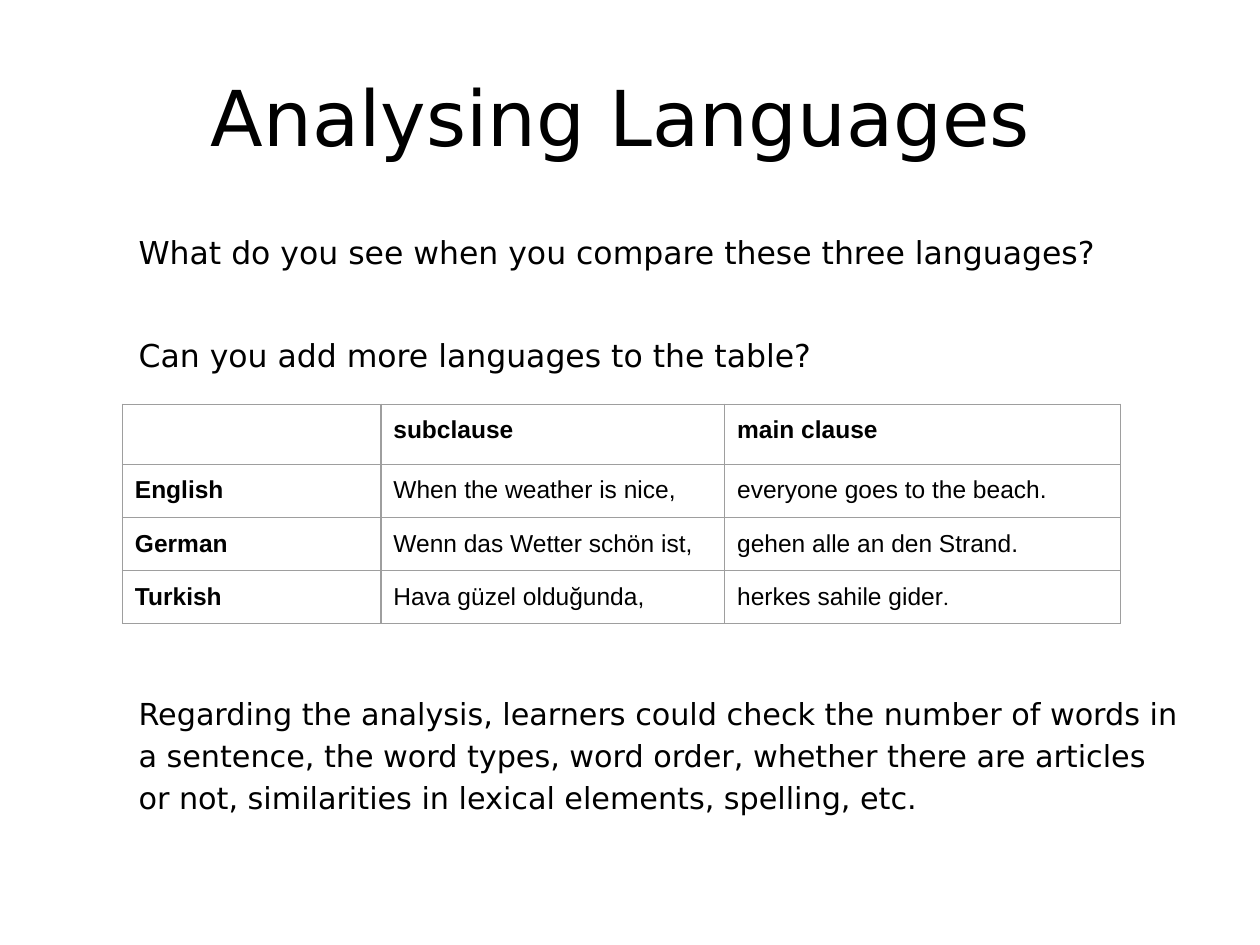
from dataclasses import dataclass

from lxml import etree
from pptx import Presentation
from pptx.dml.color import RGBColor
from pptx.enum.text import MSO_ANCHOR, MSO_AUTO_SIZE, PP_ALIGN
from pptx.oxml.ns import qn
from pptx.util import Cm, Pt

CENTER, LEFT = PP_ALIGN.CENTER, PP_ALIGN.LEFT
TOP, MIDDLE = MSO_ANCHOR.TOP, MSO_ANCHOR.MIDDLE
NO_AUTOFIT = MSO_AUTO_SIZE.NONE

COLORS = {"text": "000000", "border": "9E9E9E", "background": "FFFFFF"}
HEADING_FONT, TABLE_FONT = "DejaVu Sans", "Arial"
CELL_MARGIN = Cm(0.25)
COLUMN_WIDTHS = [Cm(5.21), Cm(6.93), Cm(7.98)]
HEADER_HEIGHT, ROW_HEIGHT = Cm(1.21), Cm(1.07)


@dataclass
class BodyParagraph:
    text: str
    size: float
    space_before: float = 0


@dataclass
class TextRun:
    text: str
    size: float = 14
    font: str = TABLE_FONT


BODY = [
    BodyParagraph("What do you see when you compare these three languages?", 18),
    BodyParagraph("Can you add more languages to the table?", 18, 34),
    BodyParagraph(
        "Regarding the analysis, learners could check the number of words in "
        "a sentence, the word types, word order, whether there are articles "
        "or not, similarities in lexical elements, spelling, etc.", 17.3, 181),
]

ROWS = [
    [[], [TextRun("subclause")], [TextRun("main clause")]],
    [[TextRun("English")], [TextRun("When the weather is nice,")],
     [TextRun("everyone goes to the beach.")]],
    [[TextRun("German")], [TextRun("Wenn das Wetter schön ist,")],
     [TextRun("gehen alle an den Strand.")]],
    [[TextRun("Turkish")], [TextRun("Hava güzel olduğunda,")],
     [TextRun("herkes sahile gider"), TextRun(".", 12, "Calibri")]],
]


def add_run(paragraph, text: str, size: float, font: str, bold: bool = False) -> None:
    run = paragraph.add_run()
    run.text = text
    run.font.size = Pt(size)
    run.font.name = font
    run.font.bold = bold
    run.font.color.rgb = RGBColor.from_string(COLORS["text"])


def place(shape, left: float, top: float, width: float, height: float) -> None:
    """Position a placeholder, with lengths in centimetres."""
    shape.left, shape.top = Cm(left), Cm(top)
    shape.width, shape.height = Cm(width), Cm(height)


def fill_title(title) -> None:
    place(title, 1.09, 0.74, 22.86, 3.18)
    frame = title.text_frame
    frame.auto_size = NO_AUTOFIT
    frame.vertical_anchor = MIDDLE
    paragraph = frame.paragraphs[0]
    paragraph.alignment = CENTER
    add_run(paragraph, "Analysing Languages", 44, HEADING_FONT)


def fill_body(body) -> None:
    place(body, 1.27, 4.45, 22.86, 12.57)
    frame = body.text_frame
    frame.auto_size = NO_AUTOFIT
    frame.vertical_anchor = TOP
    for index, item in enumerate(BODY):
        paragraph = frame.add_paragraph() if index else frame.paragraphs[0]
        properties = paragraph._p.get_or_add_pPr()
        properties.set("marL", str(Cm(1.27)))
        properties.set("indent", "0")
        etree.SubElement(properties, qn("a:buNone"))
        paragraph.alignment = LEFT
        paragraph.line_spacing = 1.15
        paragraph.space_before = Pt(item.space_before)
        add_run(paragraph, item.text, item.size, HEADING_FONT)


def set_borders(cell) -> None:
    properties = cell._tc.get_or_add_tcPr()
    for position, side in enumerate(("lnL", "lnR", "lnT", "lnB")):
        line = etree.Element(qn(f"a:{side}"), w=str(Pt(0.75)))
        fill = etree.SubElement(line, qn("a:solidFill"))
        etree.SubElement(fill, qn("a:srgbClr"), val=COLORS["border"])
        properties.insert(position, line)


def fill_cell(cell, runs: list[TextRun], bold: bool) -> None:
    cell.fill.background()
    set_borders(cell)
    cell.vertical_anchor = TOP
    if not runs:
        return
    cell.margin_left = cell.margin_right = CELL_MARGIN
    cell.margin_top = cell.margin_bottom = CELL_MARGIN
    for run in runs:
        add_run(cell.text_frame.paragraphs[0], run.text, run.size, run.font, bold)


def add_language_table(slide) -> None:
    heights = [HEADER_HEIGHT] + [ROW_HEIGHT] * (len(ROWS) - 1)
    table = slide.shapes.add_table(
        len(ROWS), len(COLUMN_WIDTHS), Cm(2.47), Cm(8.15),
        sum(COLUMN_WIDTHS), sum(heights)).table
    table.horz_banding = False
    table.first_row = False
    for column, width in zip(table.columns, COLUMN_WIDTHS):
        column.width = width
    for row, height in zip(table.rows, heights):
        row.height = height
    for row_index, cells in enumerate(ROWS):
        for column_index, runs in enumerate(cells):
            bold = row_index == 0 or column_index == 0
            fill_cell(table.cell(row_index, column_index), runs, bold)


def main() -> None:
    presentation = Presentation()
    presentation.slide_width, presentation.slide_height = Cm(25.4), Cm(19.05)
    slide = presentation.slides.add_slide(presentation.slide_layouts[1])
    background = slide.background.fill
    background.solid()
    background.fore_color.rgb = RGBColor.from_string(COLORS["background"])
    fill_title(slide.shapes.title)
    fill_body(slide.placeholders[1])
    add_language_table(slide)
    presentation.save("out.pptx")


if __name__ == "__main__":
    main()
